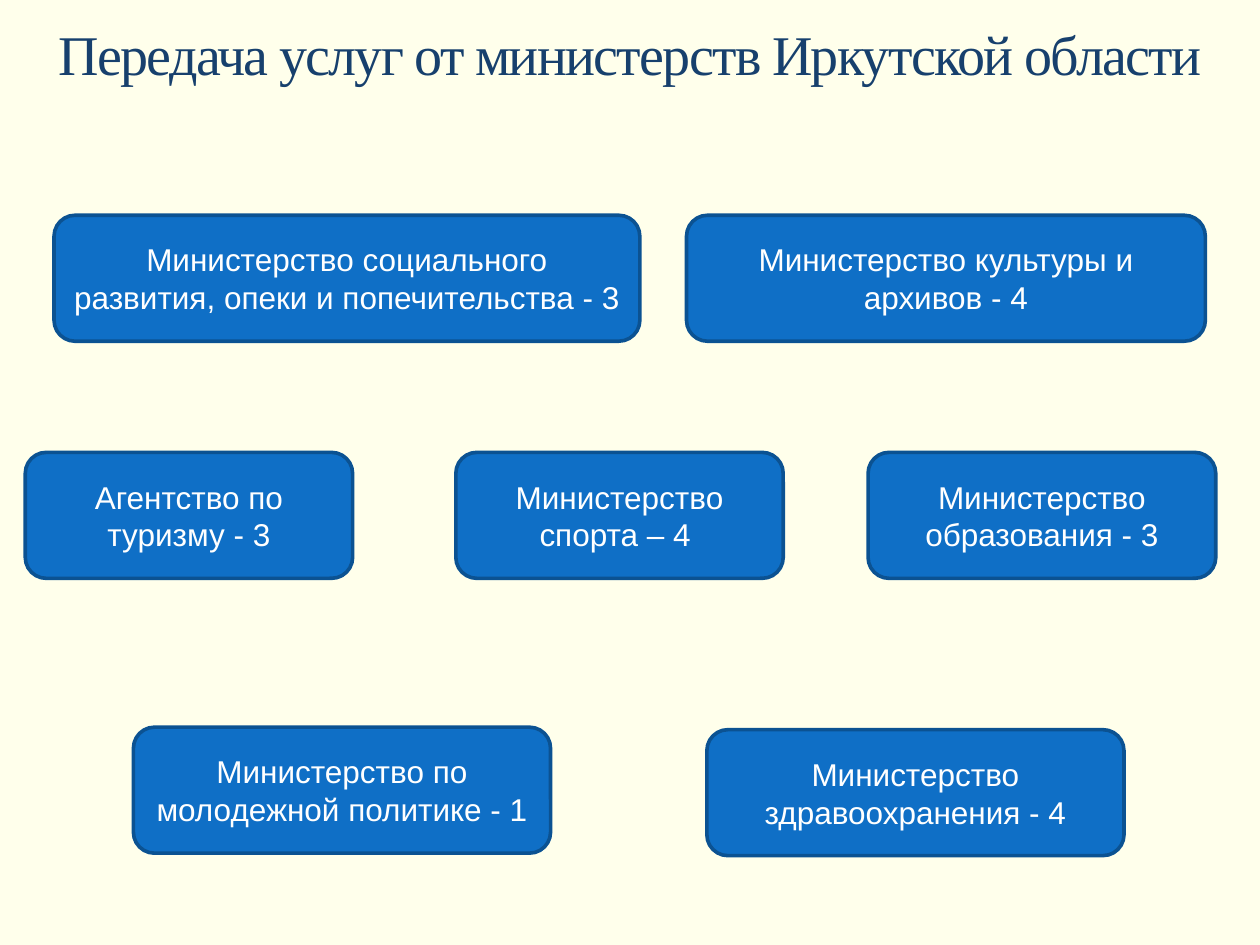
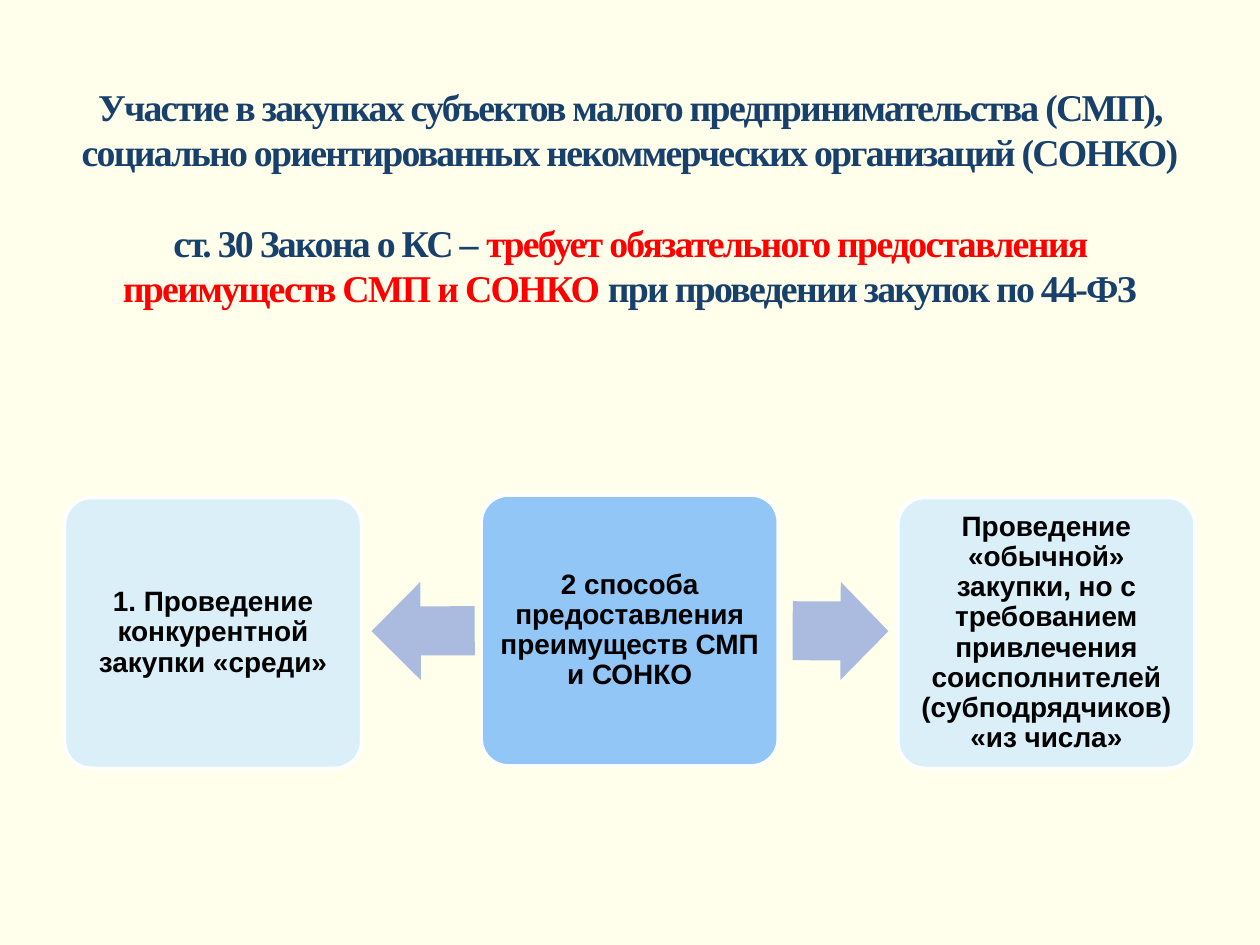
from pptx import Presentation
from pptx.dml.color import RGBColor
from pptx.enum.shapes import MSO_SHAPE
from pptx.enum.text import MSO_ANCHOR, PP_ALIGN
from pptx.util import Cm, Pt

ROUND = MSO_SHAPE.ROUNDED_RECTANGLE
LEFT = MSO_SHAPE.LEFT_ARROW
RIGHT = MSO_SHAPE.RIGHT_ARROW
MIDDLE = MSO_ANCHOR.MIDDLE
CENTER = PP_ALIGN.CENTER

CREAM = RGBColor(0xFF, 0xFF, 0xEB)
NAVY = RGBColor(0x17, 0x40, 0x6D)
RED = RGBColor(0xFF, 0x00, 0x00)
BLUE = RGBColor(0x0F, 0x6F, 0xC6)
EDGE = RGBColor(0x0B, 0x52, 0x92)
WHITE = RGBColor(0xFF, 0xFF, 0xFF)
BLACK = RGBColor(0x00, 0x00, 0x00)
PALE = RGBColor(0xDB, 0xEF, 0xF9)
SKY = RGBColor(0x91, 0xC6, 0xF7)
LILAC = RGBColor(0xAB, 0xBB, 0xDF)

SERIF = "Times New Roman"
SANS = "Arial"


class Deck:
    def __init__(self):
        self.prs = Presentation()
        self.prs.slide_width = Cm(25.4)
        self.prs.slide_height = Cm(19.05)
        fill = self.prs.slide_master.background.fill
        fill.solid()
        fill.fore_color.rgb = CREAM
        self.slide = None

    def page(self):
        self.slide = self.prs.slides.add_slide(self.prs.slide_layouts[6])

    def font(self, run, name, size, color, bold=False):
        run.font.name = name
        run.font.size = Pt(size)
        run.font.color.rgb = color
        run.font.bold = bold

    def title(self, place, lines, size, bold=False, gap=0, base=0.13):
        box = self.slide.shapes.add_textbox(*map(Cm, place))
        frame = box.text_frame
        frame.word_wrap = True
        frame.vertical_anchor = MIDDLE
        frame.margin_bottom = Cm(base)
        for index, parts in enumerate(lines):
            para = frame.add_paragraph() if index else frame.paragraphs[0]
            para.alignment = CENTER
            para.space_before = Pt(gap if index else 0)
            for text, color in parts:
                run = para.add_run()
                run.text = text
                self.font(run, SERIF, size, color, bold)
                run.font._element.set("spc", "-100")

    def shape(self, kind, place, fill, edge=None):
        item = self.slide.shapes.add_shape(kind, *map(Cm, place))
        item.shadow.inherit = False
        item.fill.solid()
        item.fill.fore_color.rgb = fill
        if edge is None:
            item.line.fill.background()
        else:
            item.line.color.rgb = edge
            item.line.width = Pt(2.08)
        return item

    def label(self, item, text, size, color, bold=False):
        frame = item.text_frame
        frame.text = text
        frame.word_wrap = True
        frame.vertical_anchor = MIDDLE
        para = frame.paragraphs[0]
        para.alignment = CENTER
        self.font(para.runs[0], SANS, size, color, bold)

    def office(self, left, top, width, text):
        item = self.shape(ROUND, (left, top, width, 2.54), BLUE, EDGE)
        self.label(item, text, 18, WHITE)

    def card(self, left, top, fill, text):
        item = self.shape(ROUND, (left, top, 5.99, 5.46), fill, WHITE)
        item.adjustments[0] = 0.1
        self.label(item, text, 16, BLACK, True)
        frame = item.text_frame
        frame.margin_left = frame.margin_right = Cm(0.18)
        frame.margin_top = frame.margin_bottom = Cm(0.18)
        frame.paragraphs[0].line_spacing = 0.9

    def arrow(self, kind, left, width, turn, shaft):
        item = self.shape(kind, (left, 11.73, width, 1.98), LILAC)
        item.rotation = turn
        item.adjustments[0] = shaft


def main():
    deck = Deck()

    deck.page()
    head = "Передача услуг от министерств Иркутской области"
    deck.title((0, 0, 25.4, 2.13), [[(head, NAVY)]], 32)
    for left, top, width, text in (
        (1.09, 4.34, 11.81, "Министерство социального развития, опеки и попечительства - 3"),
        (13.84, 4.34, 10.46, "Министерство культуры и архивов - 4"),
        (0.51, 9.12, 6.6, "Агентство по туризму - 3"),
        (9.19, 9.12, 6.6, "Министерство спорта – 4 "),
        (17.5, 9.12, 7.01, "Министерство образования - 3"),
        (2.69, 14.66, 8.41, "Министерство по молодежной политике - 1"),
        (14.25, 14.71, 8.41, "Министерство здравоохранения - 4"),
    ):
        deck.office(left, top, width, text)

    deck.page()
    lines = [
        [("Участие в закупках субъектов малого предпринимательства (СМП), "
          "социально ориентированных некоммерческих организаций (СОНКО)", NAVY)],
        [("ст. 30 Закона о КС – ", NAVY),
         ("требует обязательного предоставления преимуществ СМП и СОНКО", RED),
         (" при проведении закупок по 44-ФЗ", NAVY)],
    ]
    deck.title((1.27, 0.53, 22.86, 7.8), lines, 21.6, True, gap=26, base=1.04)
    cards = (
        (10.03, PALE, "1. Проведение конкурентной закупки «среди»"),
        (9.98, SKY, "2 способа предоставления преимуществ СМП и СОНКО"),
        (10.03, PALE, "Проведение «обычной» закупки, но с требованием привлечения "
                      "соисполнителей (субподрядчиков) «из числа»"),
    )
    for index, (top, fill, text) in enumerate(cards):
        deck.card(1.3 + 8.4 * index, top, fill, text)
    deck.arrow(LEFT, 7.49, 2.08, 359.7, 0.5)
    deck.arrow(RIGHT, 15.98, 1.93, 0.3, 0.6)

    deck.prs.save("out.pptx")


if __name__ == "__main__":
    main()
